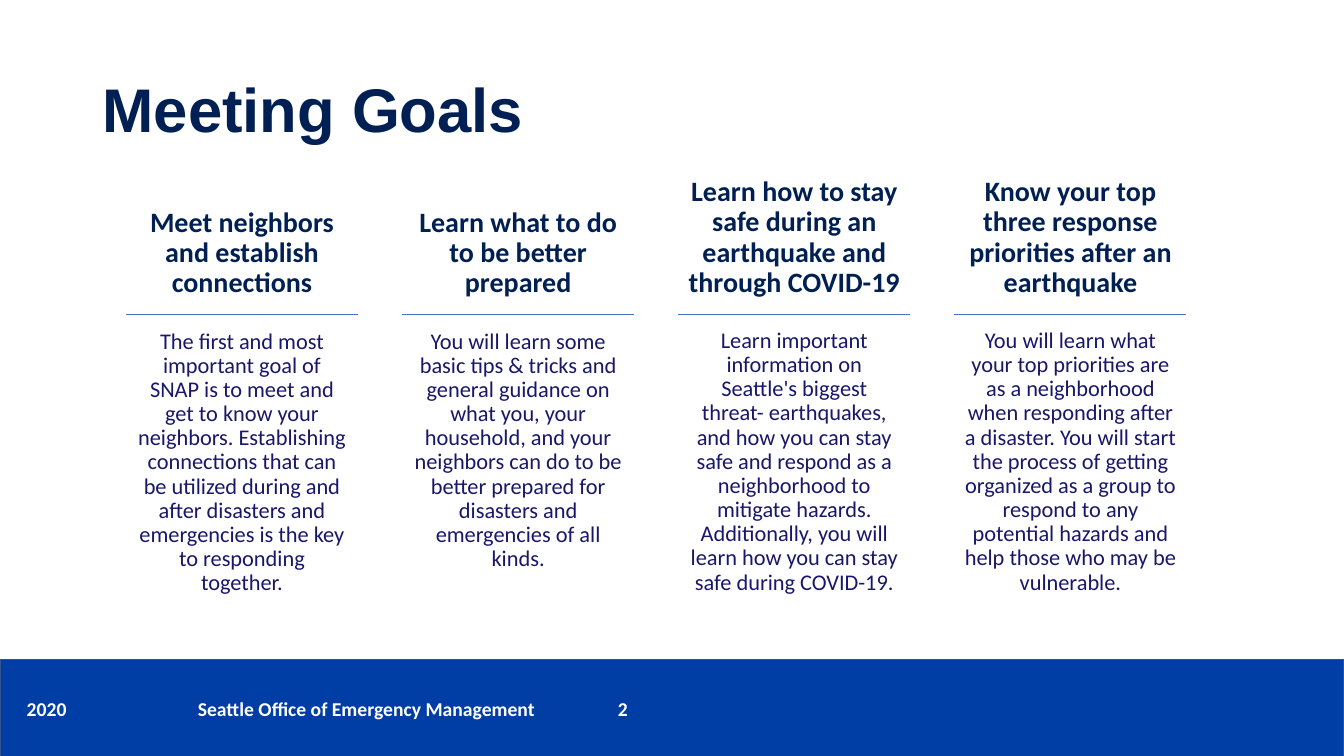
from dataclasses import dataclass

from pptx import Presentation
from pptx.dml.color import RGBColor
from pptx.enum.shapes import MSO_CONNECTOR, MSO_SHAPE
from pptx.enum.text import MSO_ANCHOR, MSO_AUTO_SIZE, PP_ALIGN
from pptx.oxml.ns import qn
from pptx.util import Emu, Pt
from lxml.etree import SubElement


@dataclass(frozen=True)
class Theme:
    """Colours, fonts and type sizes."""
    navy: str = "001F52"
    indigo: str = "191769"
    band: str = "003DA5"
    band_line: str = "31538F"
    rule: str = "4472C4"
    white: str = "FFFFFF"
    title_font: str = "Arial"
    text_font: str = "Calibri"
    title: int = 44
    heading: int = 20
    body: int = 16
    footer: int = 14
    heading_line: int = 22
    leading: float = 0.9


T = Theme()
COL_X, COL_Y, COL_W, COL_H, COL_STEP, RULE_Y = 120, 164, 221, 463, 263, 299
HEADING_LINES = 4

GOALS = [
    (3, "Meet neighbors and establish connections",
     "The first and most important goal of SNAP is to meet and get to know your "
     "neighbors. Establishing connections that can be utilized during and after "
     "disasters and emergencies is the key to responding together."),
    (3, "Learn what to do to be better prepared",
     "You will learn some basic tips & tricks and general guidance on what you, your "
     "household, and your neighbors can do to be better prepared for disasters and "
     "emergencies of all kinds."),
    (4, "Learn how to stay safe during an earthquake and through COVID-19",
     "Learn important information on Seattle's biggest threat- earthquakes, and how "
     "you can stay safe and respond as a neighborhood to mitigate hazards. "
     "Additionally, you will learn how you can stay safe during COVID-19."),
    (4, "Know your top three response priorities after an earthquake",
     "You will learn what your top priorities are as a neighborhood when responding "
     "after a disaster. You will start the process of getting organized as a group to "
     "respond to any potential hazards and help those who may be vulnerable."),
]

FOOTER = [
    (16, 160, "2020"),
    (179, 384, "Seattle Office of Emergency Management"),
    (579, 84, "2"),
]


def px(n):
    """Turn whole pixels into EMU."""
    return Emu(n * 9525)


def rgb(color):
    """Turn a hex string into a colour."""
    return RGBColor.from_string(color)


def place(sp, x, y, w, h):
    """Move and size a shape."""
    sp.left, sp.top, sp.width, sp.height = px(x), px(y), px(w), px(h)


def style(p, font, size, color, bold):
    """Format the runs of a paragraph."""
    for r in p.runs:
        r.font.name, r.font.size, r.font.bold = font, Pt(size), bold
        r.font.color.rgb = rgb(color)


def setup_frame(tf, anchor):
    """Wrap a text frame at a fixed size and anchor it."""
    tf.word_wrap = True
    tf.auto_size = MSO_AUTO_SIZE.NONE
    tf.vertical_anchor = anchor


def add_title(s, text):
    """Fill the title placeholder."""
    sp = s.shapes.title
    place(sp, 88, 38, 1104, 139)
    tf = sp.text_frame
    setup_frame(tf, MSO_ANCHOR.MIDDLE)
    tf.text = text
    p = tf.paragraphs[0]
    p.alignment, p.line_spacing = PP_ALIGN.LEFT, T.leading
    style(p, T.title_font, T.title, T.navy, True)


def add_paragraph_format(p, space_before):
    """Centre a paragraph without bullet or indent."""
    pPr = p._p.get_or_add_pPr()
    pPr.set("marL", "0")
    pPr.set("indent", "0")
    SubElement(pPr, qn("a:buNone"))
    p.alignment, p.line_spacing = PP_ALIGN.CENTER, T.leading
    p.space_before, p.space_after = Pt(space_before), Pt(0)


def fill_goal(sp, x, lines, heading, body):
    """Write one goal, its heading ending just above the rule."""
    place(sp, x, COL_Y, COL_W, COL_H)
    tf = sp.text_frame
    setup_frame(tf, MSO_ANCHOR.TOP)
    tf.margin_top = px(5) + Pt((HEADING_LINES - lines) * T.heading_line)
    p = tf.paragraphs[0]
    p.text = heading
    add_paragraph_format(p, 0)
    style(p, T.text_font, T.heading, T.navy, True)
    p = tf.add_paragraph()
    p.text = body
    add_paragraph_format(p, T.heading_line)
    style(p, T.text_font, T.body, T.indigo, False)


def add_rule(s, x):
    """Draw the thin line under a heading."""
    line = s.shapes.add_connector(
        MSO_CONNECTOR.STRAIGHT, px(x), px(RULE_Y), px(x + COL_W), px(RULE_Y))
    line.line.color.rgb = rgb(T.rule)
    line.line.width = Pt(0.5)
    SubElement(line._element.spPr, qn("a:effectLst"))


def add_band(s):
    """Draw the footer band."""
    sp = s.shapes.add_shape(MSO_SHAPE.RECTANGLE, px(0), px(628), px(1280), px(94))
    sp.shadow.inherit = False
    sp.fill.solid()
    sp.fill.fore_color.rgb = rgb(T.band)
    sp.line.color.rgb = rgb(T.band_line)
    sp.line.width = Pt(1)


def add_footer_text(s, x, w, text):
    """Add one white text on the footer band."""
    tf = s.shapes.add_textbox(px(x), px(656), px(w), px(38)).text_frame
    setup_frame(tf, MSO_ANCHOR.MIDDLE)
    tf.text = text
    style(tf.paragraphs[0], T.text_font, T.footer, T.white, True)


def main():
    """Build the slide and save it."""
    prs = Presentation()
    prs.slide_width, prs.slide_height = px(1280), px(720)
    s = prs.slides.add_slide(prs.slide_layouts[1])
    add_band(s)
    for x, w, text in FOOTER:
        add_footer_text(s, x, w, text)
    add_title(s, "Meeting Goals")
    for i, goal in enumerate(GOALS):
        x = COL_X + i * COL_STEP
        sp = s.placeholders[1] if i == 0 else s.shapes.add_textbox(0, 0, 0, 0)
        fill_goal(sp, x, *goal)
        add_rule(s, x)
    prs.save("out.pptx")


if __name__ == "__main__":
    main()
